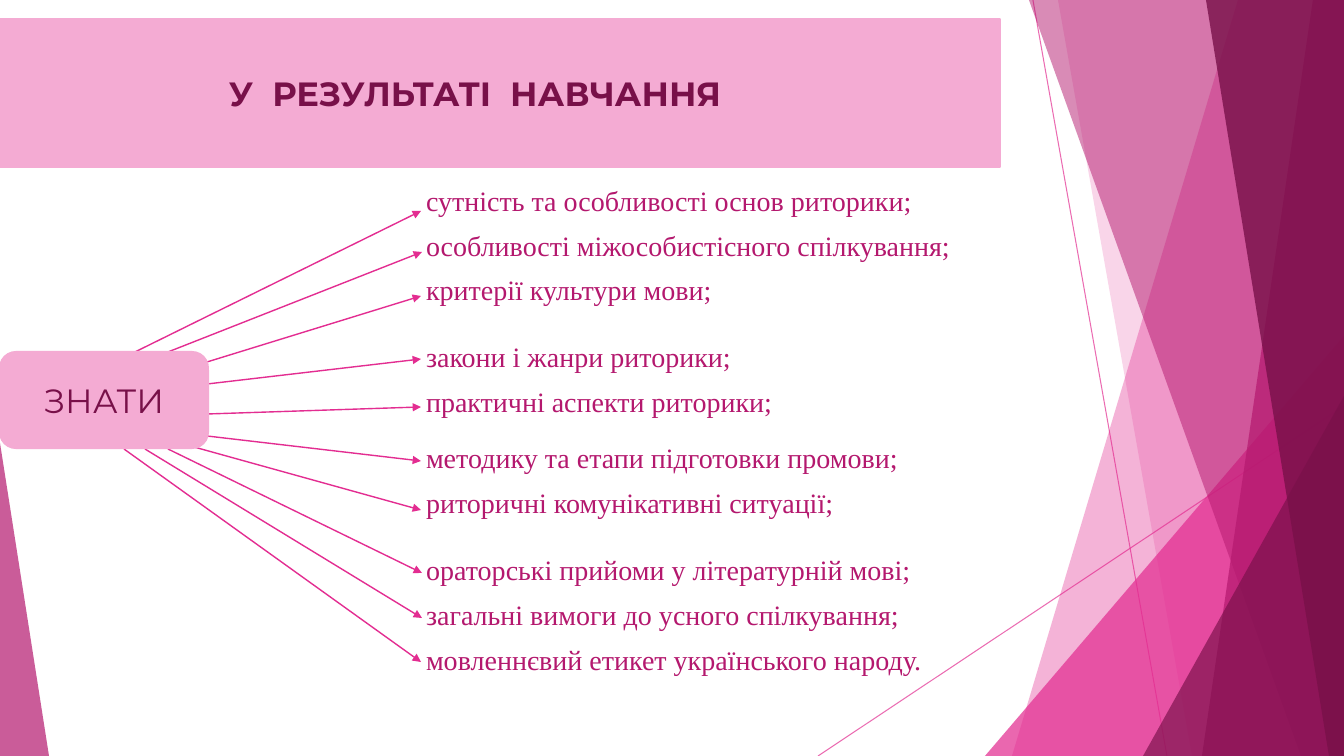
from lxml import etree
from pptx import Presentation
from pptx import util as u
from pptx.dml.color import RGBColor
from pptx.enum import shapes, text
from pptx.oxml.ns import qn

SCALE = u.Inches(7.5) / 756
WIDTH, HEIGHT = 1344, 756
THEME = {
    "pink": RGBColor.from_string("E32D91"),
    "pale": RGBColor.from_string("F4ABD3"),
    "berry": RGBColor.from_string("B4186E"),
    "plum": RGBColor.from_string("781049"),
    "heading": "Montserrat",
    "body": "Times New Roman",
    "heading_size": u.Pt(24),
    "body_size": u.Pt(20),
    "line_pitch": u.Pt(32),
}


def px(*lengths):
    return [round(length * SCALE) for length in lengths]


def set_opacity(shape, percent):
    for colour in shape._element.spPr.iter(qn("a:srgbClr")):
        etree.SubElement(colour, qn("a:alpha"), val=str(percent * 1000))


deck = Presentation()
deck.slide_width, deck.slide_height = px(WIDTH, HEIGHT)
page = deck.slides.add_slide(deck.slide_layouts[1])
title, body = page.placeholders

rays = [
    ((1033, 0, 1167, 756), 0.75, 70, False),
    ((1344, 406, 818, 756), 0.75, 70, False),
]
facets = [
    ("ribbon", (1238, 1012), "pink", 36),
    ("ribbon", (1058, 1192), "pink", 20),
    ("peak", (985, 336, 359, 420, 1), "pink", 72),
    ("ribbon", (1029, 1301), "berry", 50),
    ("ribbon", (1313, 1202), "berry", 70),
    ("ribbon", (1206, 1329), "plum", 80),
    ("peak", (1143, 396, 201, 360, 1), "plum", 66),
    ("peak", (0, 443, 49, 313, 0), "berry", 70),
]
arrows = [
    (135, 352, 421, 211),
    (168, 352, 422, 252),
    (207, 362, 421, 296),
    (207, 384, 421, 359),
    (207, 414, 421, 407),
    (207, 436, 421, 461),
    (194, 447, 421, 510),
    (168, 449, 422, 573),
    (145, 449, 422, 618),
    (124, 449, 421, 662),
]
topics = [
    ("сутність та особливості основ риторики;", 0),
    ("особливості міжособистісного спілкування;", 0),
    ("критерії культури мови;", 0),
    ("закони і жанри риторики;", 16),
    ("практичні аспекти риторики;", 0),
    ("методику та етапи підготовки промови;", 8),
    ("риторичні комунікативні ситуації;", 0),
    ("ораторські прийоми у літературній мові;", 16),
    ("загальні вимоги до усного спілкування;", 0),
    ("мовленнєвий етикет українського народу.", 0),
]

lines = rays + [(ends, 1, 100, True) for ends in arrows]
for ends, weight, opacity, pointed in lines:
    line = page.shapes.add_connector(shapes.MSO_CONNECTOR.STRAIGHT, *px(*ends))
    line.line.color.rgb = THEME["pink"]
    line.line.width = u.Pt(weight)
    if opacity < 100:
        set_opacity(line, opacity)
    if pointed:
        etree.SubElement(line.line._get_or_add_ln(), qn("a:tailEnd"), type="triangle")
    etree.SubElement(line._element.spPr, qn("a:effectLst"))

for kind, geometry, colour, opacity in facets:
    if kind == "ribbon":
        top, bottom = geometry
        outline = page.shapes.build_freeform(top, 0, scale=SCALE)
        outline.add_line_segments([(WIDTH, 0), (WIDTH, HEIGHT), (bottom, HEIGHT)])
        facet = outline.convert_to_shape()
    else:
        *bounds, apex = geometry
        facet = page.shapes.add_shape(shapes.MSO_SHAPE.ISOSCELES_TRIANGLE, *px(*bounds))
        facet.adjustments[0] = apex
    facet.shadow.inherit = False
    facet.fill.solid()
    facet.fill.fore_color.rgb = THEME[colour]
    facet.line.fill.background()
    set_opacity(facet, opacity)

know = page.shapes.add_shape(shapes.MSO_SHAPE.ROUNDED_RECTANGLE, *px(0, 352, 208, 96))
know.shadow.inherit = False

left, centre = text.PP_ALIGN.LEFT, text.PP_ALIGN.CENTER
boxes = [
    (title, (0, 19, 1000, 148), 229, "У  РЕЗУЛЬТАТІ  НАВЧАННЯ", left, True),
    (know, (0, 352, 208, 96), 0, "ЗНАТИ", centre, False),
]
for box, bounds, inset, wording, alignment, bold in boxes:
    box.left, box.top, box.width, box.height = px(*bounds)
    box.fill.solid()
    box.fill.fore_color.rgb = THEME["pale"]
    box.line.color.rgb = THEME["pale"]
    box.line.width = u.Pt(1.5)
    frame_format = {
        "auto_size": text.MSO_AUTO_SIZE.NONE,
        "vertical_anchor": text.MSO_ANCHOR.MIDDLE,
        "margin_left": px(inset)[0],
        "margin_right": 0,
    }
    for name, value in frame_format.items():
        setattr(box.text_frame, name, value)
    para = box.text_frame.paragraphs[0]
    para.alignment = alignment
    span = para.add_run()
    span.text = wording
    span.font.color.rgb = THEME["plum"]
    font_format = {"name": THEME["heading"], "size": THEME["heading_size"], "bold": bold}
    for name, value in font_format.items():
        setattr(span.font, name, value)

body.left, body.top, body.width, body.height = px(426, 172, 570, 514)
body_format = {
    "auto_size": text.MSO_AUTO_SIZE.NONE,
    "vertical_anchor": text.MSO_ANCHOR.TOP,
    "margin_left": 0,
    "margin_top": 0,
    "margin_right": 0,
    "margin_bottom": 0,
}
for name, value in body_format.items():
    setattr(body.text_frame, name, value)
for index, (topic, gap) in enumerate(topics):
    para = body.text_frame.add_paragraph() if index else body.text_frame.paragraphs[0]
    para.line_spacing = THEME["line_pitch"]
    para.space_before = u.Pt(gap)
    properties = para._p.get_or_add_pPr()
    properties.set("marL", "0")
    properties.set("indent", "0")
    etree.SubElement(properties, qn("a:buNone"))
    span = para.add_run()
    span.text = topic
    span.font.color.rgb = THEME["berry"]
    for name, value in {"name": THEME["body"], "size": THEME["body_size"]}.items():
        setattr(span.font, name, value)

deck.save("out.pptx")
